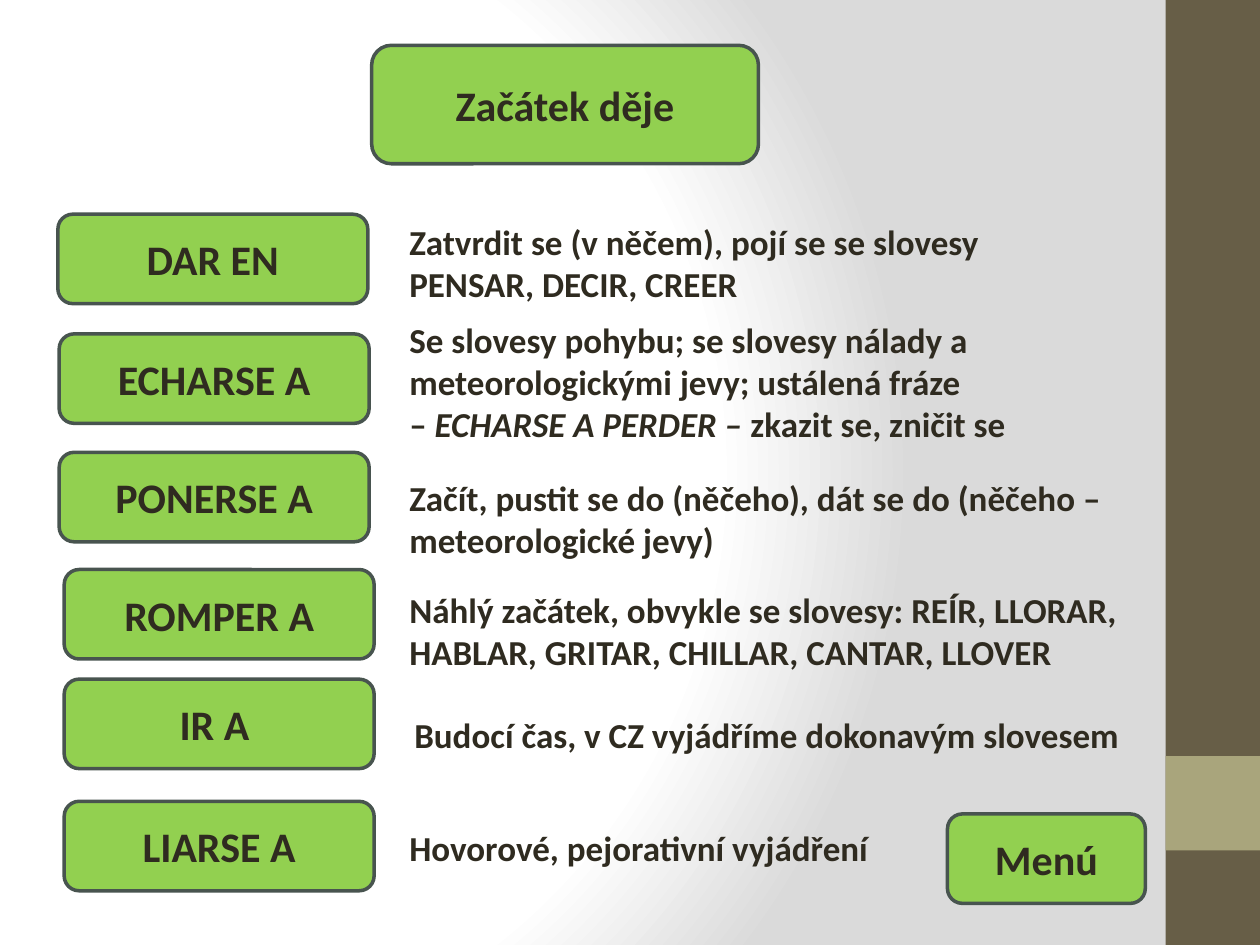
from lxml import etree
from pptx import Presentation
from pptx.dml.color import RGBColor
from pptx.enum.shapes import MSO_SHAPE
from pptx.enum.text import MSO_ANCHOR, MSO_AUTO_SIZE, PP_ALIGN
from pptx.util import Inches, Pt

BACK = """
<p:bg xmlns:p="http://schemas.openxmlformats.org/presentationml/2006/main"
      xmlns:a="http://schemas.openxmlformats.org/drawingml/2006/main">
  <p:bgPr>
    <a:gradFill rotWithShape="1">
      <a:gsLst>
        <a:gs pos="0"><a:srgbClr val="FFFFFF"/></a:gs>
        <a:gs pos="75000"><a:srgbClr val="FFFFFF"/></a:gs>
        <a:gs pos="100000"><a:srgbClr val="DADADA"/></a:gs>
      </a:gsLst>
      <a:path path="circle">
        <a:fillToRect l="20000" t="50000" r="100000" b="50000"/>
      </a:path>
    </a:gradFill>
    <a:effectLst/>
  </p:bgPr>
</p:bg>"""


def shade(kind, box, fill, line=None):
    """Add a filled shape; box is left, top, width, height in inches."""
    shape = slide.shapes.add_shape(kind, *map(Inches, box))
    shape.shadow.inherit = False
    shape.fill.solid()
    shape.fill.fore_color.rgb = RGBColor.from_string(fill)
    if line:
        shape.line.color.rgb = RGBColor.from_string(line)
        shape.line.width = Pt(2)
    else:
        shape.line.fill.background()
    return shape


def write(frame, text, size=20, color="2F2B20", align=PP_ALIGN.LEFT):
    """Write bold lines; parts between asterisks are italic."""
    for i, line in enumerate(text.split("\n")):
        para = frame.add_paragraph() if i else frame.paragraphs[0]
        para.alignment = align
        for j, part in enumerate(line.split("*")):
            run = para.add_run()
            run.text = part
            run.font.name = "Calibri"
            run.font.size = Pt(size)
            run.font.bold = True
            run.font.italic = j % 2 == 1
            run.font.color.rgb = RGBColor.from_string(color)


prs = Presentation()
prs.slide_width, prs.slide_height = Inches(10), Inches(7.5)
slide = prs.slides.add_slide(prs.slide_layouts[6])
slide.element.cSld.insert(0, etree.fromstring(BACK))

shade(MSO_SHAPE.RECTANGLE, (9.25, 0, 0.75, 7.5), "675E47")
shade(MSO_SHAPE.RECTANGLE, (9.25, 6, 0.75, 0.75), "A9A57C")

buttons = [
    ("Začátek děje", 2.95, 0.36, 3.07, 0.94),
    ("Menú", 7.52, 6.46, 1.57, 0.71),
    ("DAR EN", 0.46, 1.7, 2.46, 0.71),
    ("ECHARSE A", 0.47, 2.65, 2.46, 0.71),
    ("PONERSE A", 0.47, 3.59, 2.46, 0.71),
    ("ROMPER A", 0.51, 4.52, 2.46, 0.71),
    ("IR A ", 0.51, 5.39, 2.46, 0.71),
    ("LIARSE A", 0.51, 6.36, 2.46, 0.71),
]
for text, *box in buttons:
    button = shade(MSO_SHAPE.ROUNDED_RECTANGLE, box, "92D050", "48544F")
    button.text_frame.vertical_anchor = MSO_ANCHOR.MIDDLE
    write(button.text_frame, text, size=24, align=PP_ALIGN.CENTER)

notes = [
    ("Zatvrdit se (v něčem), pojí se se slovesy\nPENSAR, DECIR, CREER",
     3.15, 1.7, 4.83, 0.77),
    ("Se slovesy pohybu; se slovesy nálady a\n"
     "meteorologickými jevy; ustálená fráze\n"
     "– *ECHARSE A PERDER – *zkazit se, zničit se",
     3.15, 2.48, 4.97, 1.11),
    ("Začít, pustit se do (něčeho), dát se do (něčeho –\nmeteorologické jevy)",
     3.15, 3.73, 5.75, 0.77),
    ("Náhlý začátek, obvykle se slovesy: REÍR, LLORAR,\n"
     "HABLAR, GRITAR, CHILLAR, CANTAR, LLOVER",
     3.15, 4.62, 5.93, 0.77),
    ("Budocí čas, v CZ vyjádříme dokonavým slovesem", 3.19, 5.61, 5.84, 0.44),
    ("Hovorové, pejorativní vyjádření", 3.15, 6.51, 3.93, 0.44),
]
for text, *box in notes:
    frame = slide.shapes.add_textbox(*map(Inches, box)).text_frame
    frame.word_wrap = False
    frame.auto_size = MSO_AUTO_SIZE.SHAPE_TO_FIT_TEXT
    write(frame, text)

prs.save("out.pptx")
